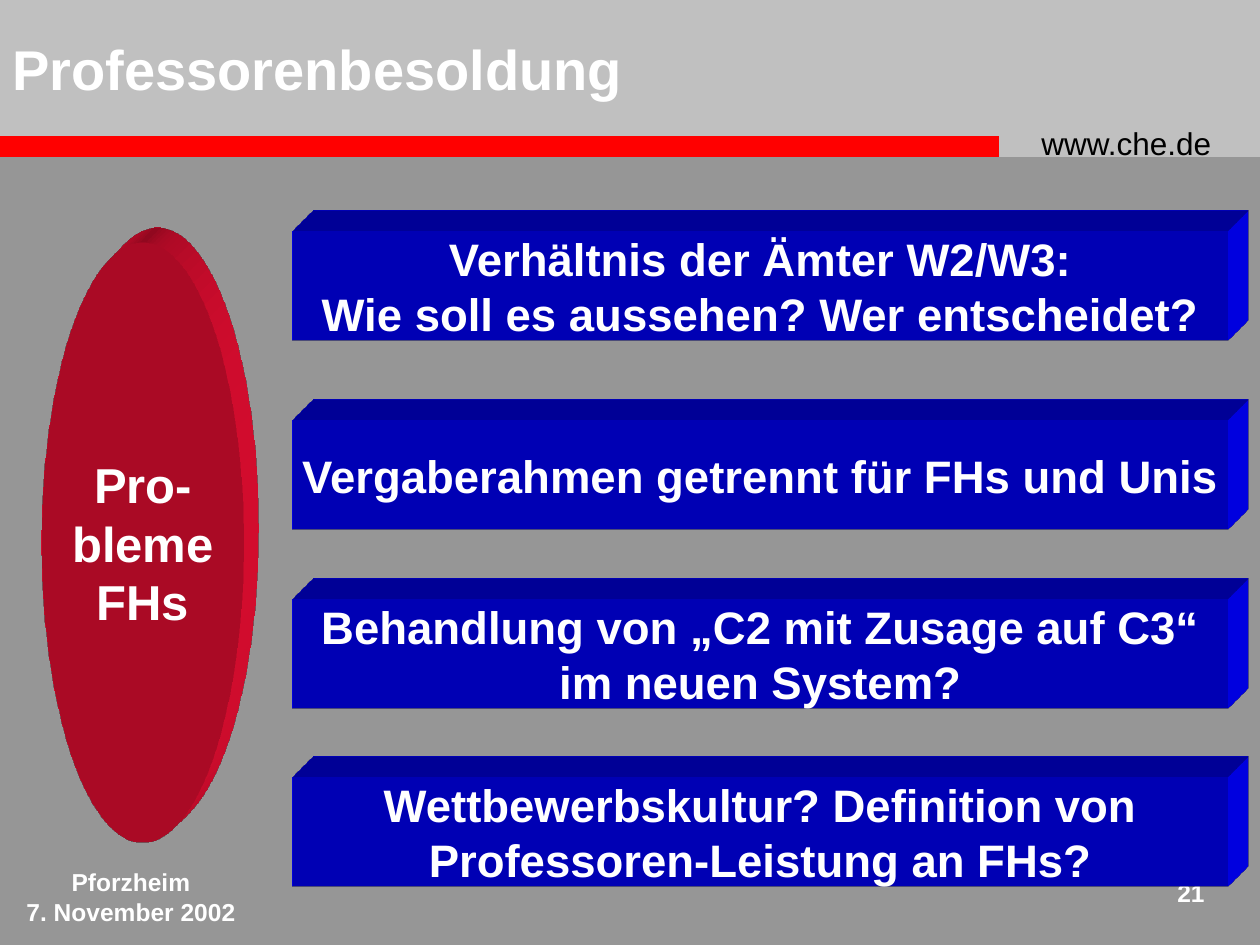
from lxml import etree
from pptx import Presentation
from pptx.dml.color import RGBColor
from pptx.enum.shapes import MSO_SHAPE as Shape
from pptx.enum.text import MSO_ANCHOR as Anchor, PP_ALIGN as Align
from pptx.oxml import parse_xml
from pptx.oxml.ns import nsdecls
from pptx.util import Pt

PX = 7257.143  # EMU in one px, 126 px to the inch
WHITE, BLACK, GREY, SILVER = "FFFFFF", "000000", "969696", "C0C0C0"
RED, BLUE, CRIMSON = "FF0000", "0000FF", "F00E34"

QUESTIONS = [
    (231, ["Verhältnis der Ämter W2/W3:", "Wie soll es aussehen? Wer entscheidet?"]),
    (420, ["Vergaberahmen getrennt für FHs und Unis"]),
    (599, ["Behandlung von „C2 mit Zusage auf C3“", "im neuen System?"]),
    (777, ["Wettbewerbskultur? Definition von", "Professoren-Leistung an FHs?"]),
]


def px(*lengths):
    return [round(length * PX) for length in lengths]


def color(hex_value):
    return RGBColor.from_string(hex_value)


def write(frame, lines, size, hex_value=WHITE, bold=True, align=Align.LEFT,
          anchor=Anchor.TOP, wrap=True):
    frame.word_wrap = wrap
    frame.vertical_anchor = anchor
    for number, line in enumerate(lines):
        paragraph = frame.add_paragraph() if number else frame.paragraphs[0]
        paragraph.text = line
        paragraph.alignment = align
        font = paragraph.font
        font.name, font.size, font.bold = "Arial", Pt(size), bold
        font.color.rgb = color(hex_value)


def add_label(slide, box, lines, size, **style):
    label = slide.shapes.add_textbox(*px(*box))
    write(label.text_frame, lines, size, **style)


def add_solid(slide, kind, box, fill):
    solid = slide.shapes.add_shape(kind, *px(*box))
    solid.fill.solid()
    solid.fill.fore_color.rgb = color(fill)
    solid.line.fill.background()
    solid.shadow.inherit = False
    return solid


def extrude(solid, depth, fill):
    """Give the shape a depth (px) that runs up to the right."""
    ns = nsdecls("a")
    properties = solid.element.spPr
    properties.append(parse_xml(
        f'<a:scene3d {ns}><a:camera prst="legacyObliqueTopRight"/>'
        '<a:lightRig rig="legacyFlat3" dir="b"/></a:scene3d>'))
    properties.append(parse_xml(
        f'<a:sp3d {ns} extrusionH="{px(depth)[0]}" prstMaterial="legacyMatte">'
        '<a:bevelT w="13500" h="13500" prst="angle"/>'
        '<a:bevelB w="13500" h="13500" prst="angle"/>'
        f'<a:extrusionClr><a:srgbClr val="{fill}"/></a:extrusionClr></a:sp3d>'))


def add_block(slide, kind, box, fill, depth, lines, size):
    block = add_solid(slide, kind, box, fill)
    extrude(block, depth, fill)
    write(block.text_frame, lines, size, align=Align.CENTER,
          anchor=Anchor.MIDDLE, wrap=False)


def main():
    deck = Presentation()
    deck.slide_width, deck.slide_height = px(1260, 945)
    slide = deck.slides.add_slide(deck.slide_layouts[6])
    slide.background.fill.solid()
    slide.background.fill.fore_color.rgb = color(GREY)

    # Header band
    add_solid(slide, Shape.RECTANGLE, (0, 0, 1260, 157), SILVER)
    add_solid(slide, Shape.RECTANGLE, (0, 136, 999, 21), RED)
    add_label(slide, (1029, 118, 221, 50), ["www.che.de"], 18,
              hex_value=BLACK, bold=False)

    # Footer
    add_label(slide, (0, 861, 262, 63), ["Pforzheim", "7. November 2002"], 14,
              align=Align.CENTER)
    add_label(slide, (1144, 872, 73, 53), ["21"], 14, align=Align.RIGHT)

    # Title
    add_label(slide, (0, 0, 1018, 136), ["Professorenbesoldung"], 32,
              anchor=Anchor.MIDDLE)

    # Questions and their common heading
    for top, lines in QUESTIONS:
        add_block(slide, Shape.RECTANGLE, (293, top, 935, 110), BLUE, 59, lines, 26)
    add_block(slide, Shape.OVAL, (42, 242, 202, 601), CRIMSON, 42,
              ["Pro-", "bleme", "FHs"], 28)

    deck.save("out.pptx")


if __name__ == "__main__":
    main()
